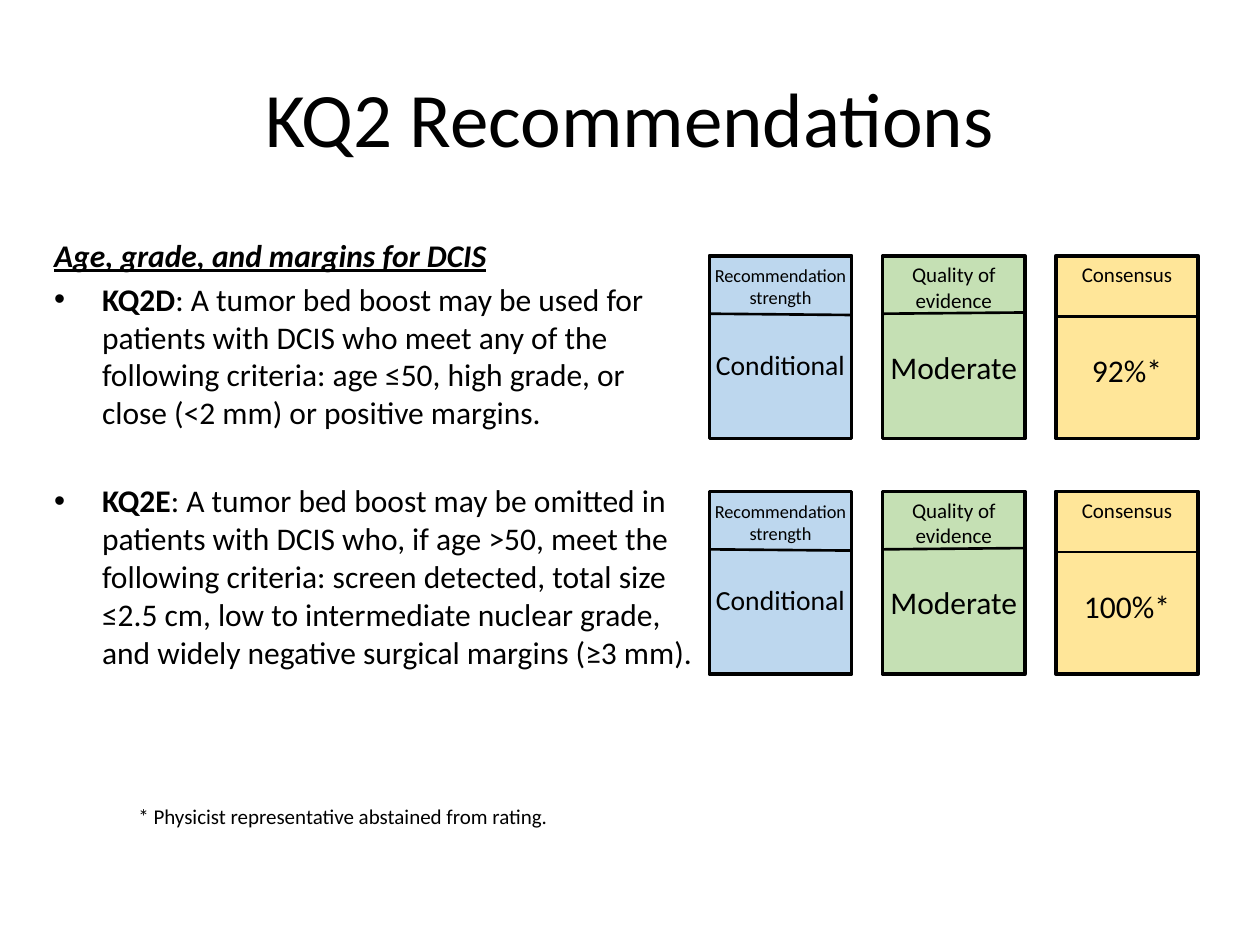
from lxml.etree import SubElement
from pptx import Presentation
from pptx.dml.color import RGBColor
from pptx.enum.shapes import MSO_CONNECTOR as Connector, MSO_SHAPE as Shape
from pptx.enum.text import MSO_ANCHOR as Anchor, MSO_AUTO_SIZE as AutoSize, PP_ALIGN as Align
from pptx.oxml.ns import qn
from pptx.util import Inches, Pt

BLACK = RGBColor(0x00, 0x00, 0x00)
BLUE = RGBColor(0xBD, 0xD7, 0xEE)
GREEN = RGBColor(0xC5, 0xE0, 0xB4)
YELLOW = RGBColor(0xFF, 0xE6, 0x99)

LEFT, COLUMN_PITCH = 5.63, 1.375
TOP, ROW_PITCH = 2.03, 1.87
CARD_WIDTH, CARD_HEIGHT = 1.13, 1.45

CARDS = [
    dict(fill=BLUE, label="Recommendation strength", label_size=10.5,
         label_insets=(0.04, 0.07), value_size=15.8, rule=(0.46, 0.47), value_top=0.68),
    dict(fill=GREEN, label="Quality of evidence", label_size=12,
         label_insets=(0.1, 0.05), value_size=18, rule=(0.46, 0.45), value_top=0.68),
    dict(fill=YELLOW, label="Consensus", label_size=12,
         label_insets=(0.1, 0.05), value_size=18, rule=(0.48, 0.48), value_top=0.71),
]
RATINGS = [("Conditional", "Moderate", "92%*"), ("Conditional", "Moderate", "100%*")]

CRITERIA = [
    ("KQ2D", ": A tumor bed boost may be used for patients with DCIS who meet any of the "
             "following criteria: age ≤50, high grade, or close (<2 mm) or positive margins.", 3.6),
    ("KQ2E", ": A tumor bed boost may be omitted in patients with DCIS who, if age >50, meet "
             "the following criteria: screen detected, total size ≤2.5 cm, low to intermediate "
             "nuclear grade, and widely negative surgical margins (≥3 mm).", 28.8),
]


def write(para, text, size=18, bold=False, italic=False, underline=False, align=None):
    """Add a formatted span of text to a paragraph."""
    if align is not None:
        para.alignment = align
    span = para.add_run()
    span.text = text
    font = span.font
    font.name, font.size, font.color.rgb = "Calibri", Pt(size), BLACK
    font.bold, font.italic, font.underline = bold, italic, underline


def place(box, left, top, width, height):
    """Move and size a placeholder in inches."""
    box.left, box.top = Inches(left), Inches(top)
    box.width, box.height = Inches(width), Inches(height)
    box.text_frame.auto_size = AutoSize.NONE


def add_text(shapes, left, top, width, height, text, insets=(0.1, 0.05), **style):
    """Add a wrapped text box with one paragraph."""
    box = shapes.add_textbox(Inches(left), Inches(top), Inches(width), Inches(height))
    frame = box.text_frame
    frame.word_wrap = True
    frame.margin_left = frame.margin_right = Inches(insets[0])
    frame.margin_top = frame.margin_bottom = Inches(insets[1])
    write(frame.paragraphs[0], text, **style)


def add_rule(shapes, left, start, right, end):
    """Add a thin black line without a shadow."""
    rule = shapes.add_connector(Connector.STRAIGHT, Inches(left), Inches(start),
                                Inches(right), Inches(end))
    rule.line.color.rgb, rule.line.width = BLACK, Pt(1.5)
    SubElement(rule._element.spPr, qn("a:effectLst"))


def add_card(shapes, left, top, value, card):
    """Add a filled card with a label above a rule and a value below it."""
    panel = shapes.add_shape(Shape.RECTANGLE, Inches(left), Inches(top),
                             Inches(CARD_WIDTH), Inches(CARD_HEIGHT))
    panel.shadow.inherit = False
    panel.fill.solid()
    panel.fill.fore_color.rgb = card["fill"]
    panel.line.color.rgb, panel.line.width = BLACK, Pt(2)
    start, end = card["rule"]
    add_rule(shapes, left, top + start, left + CARD_WIDTH, top + end)
    add_text(shapes, left, top, CARD_WIDTH, 0.5, card["label"], card["label_insets"],
             size=card["label_size"], align=Align.CENTER)
    add_text(shapes, left, top + card["value_top"], CARD_WIDTH, 0.4, value, (0.04, 0.05),
             size=card["value_size"], align=Align.CENTER)


def add_ratings(page):
    """Add one group of cards for each recommendation."""
    for row, values in enumerate(RATINGS):
        group = page.shapes.add_group_shape()
        for column, (value, card) in enumerate(zip(values, CARDS)):
            add_card(group.shapes, LEFT + column * COLUMN_PITCH, TOP + row * ROW_PITCH,
                     value, card)


def set_bullet(para, indent, before, bullet=None):
    """Set the hanging indent, space before and bullet of a paragraph."""
    para.space_before = Pt(before)
    properties = para._p.get_or_add_pPr()
    properties.set("marL", str(Inches(indent)))
    properties.set("indent", str(-Inches(indent)))
    if bullet:
        SubElement(properties, qn("a:buChar"), char=bullet)
    else:
        SubElement(properties, qn("a:buNone"))


def fill_body(body):
    """Write the heading and the bulleted recommendations."""
    place(body, 0.33, 1.82, 5.3, 3.87)
    frame = body.text_frame
    frame.vertical_anchor = Anchor.TOP
    heading = frame.paragraphs[0]
    set_bullet(heading, 0, 0)
    write(heading, "Age, grade, and margins for DCIS", bold=True, italic=True, underline=True)
    for name, text, before in CRITERIA:
        para = frame.add_paragraph()
        set_bullet(para, 0.38, before, "•")
        write(para, name, bold=True)
        write(para, text)


def main():
    """Build and save the deck."""
    deck = Presentation()
    deck.slide_width, deck.slide_height = Inches(10), Inches(7.5)
    page = deck.slides.add_slide(deck.slide_layouts[1])
    title = page.shapes.title
    place(title, 0.5, 0.3, 9, 1.25)
    write(title.text_frame.paragraphs[0], "KQ2 Recommendations", size=44, align=Align.CENTER)
    fill_body(page.placeholders[1])
    add_ratings(page)
    add_text(page.shapes, 1, 6.33, 3.46, 0.3,
             "* Physicist representative abstained from rating.", size=12)
    deck.save("out.pptx")


if __name__ == "__main__":
    main()
